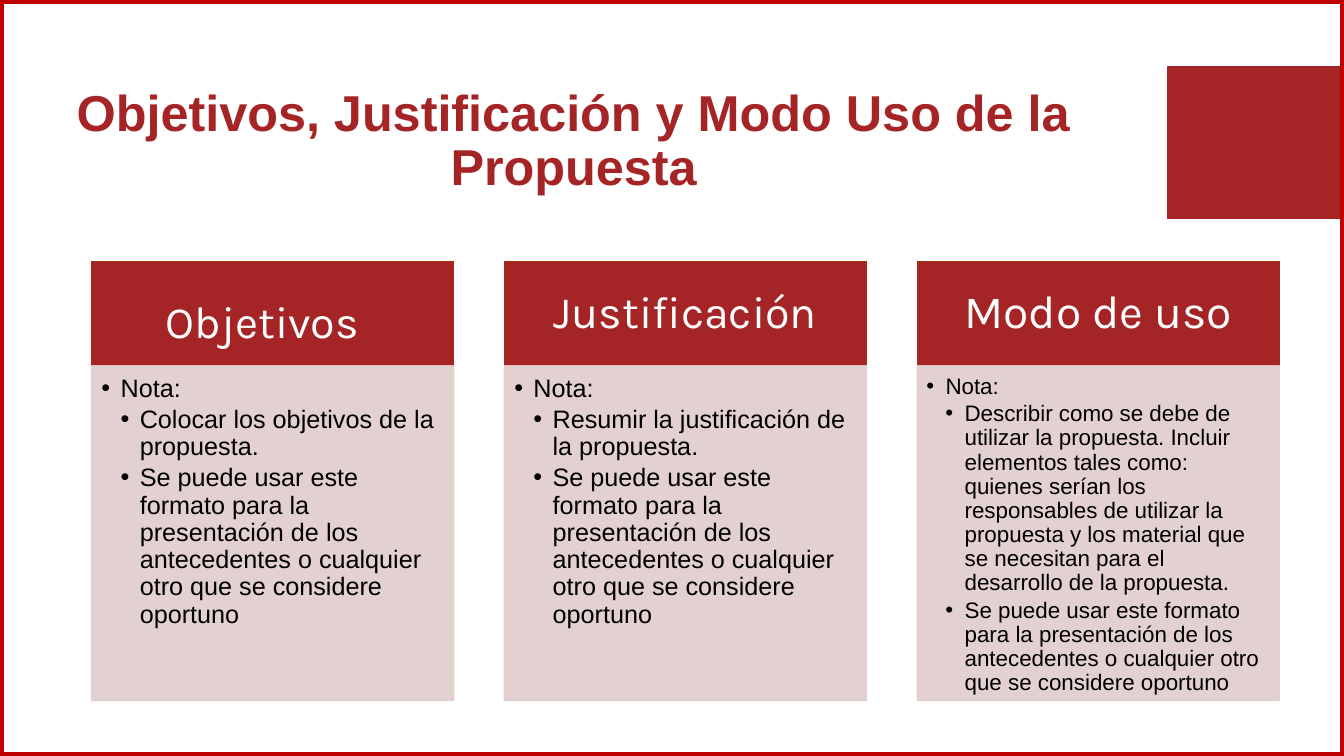
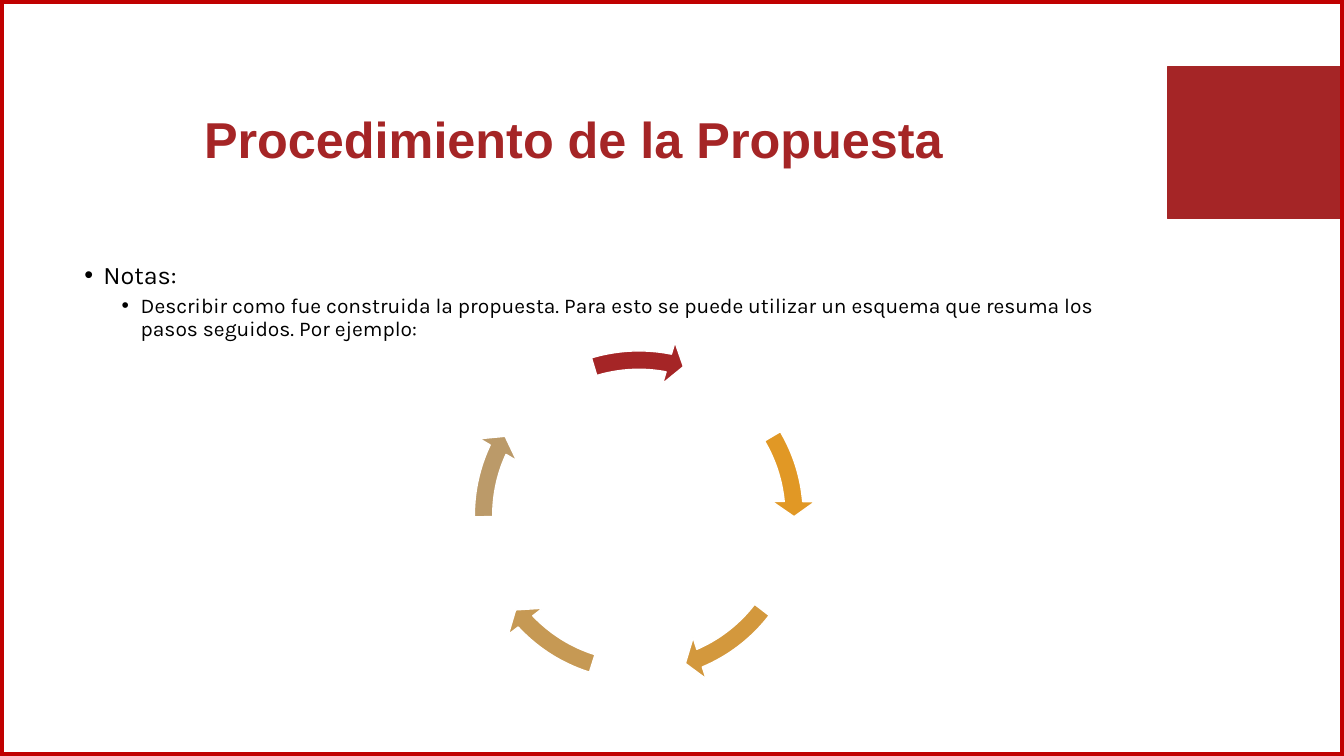
from dataclasses import dataclass

from lxml import etree
from pptx import Presentation
from pptx import util as u
from pptx.dml.color import RGBColor
from pptx.enum import shapes, text
from pptx.oxml import ns


@dataclass(frozen=True)
class Theme:
    red: str = "A52526"
    border: str = "C00000"
    header_line: str = "A5300F"
    panel: str = "E1CDCC"
    black: str = "000000"
    white: str = "FFFFFF"
    sans: str = "Arial"
    display: str = "Karla"
    title_size: float = 36
    body_size: float = 18
    detail_size: float = 15
    line_spacing: float = 0.9


THEME = Theme()

# The grid has 160 columns and 90 rows of square cells
COLUMNS, ROWS = 160, 90
CELL = u.Inches(13.333) / COLUMNS
INDENT = 0.19
DEFAULT_INSETS = (0.1, 0.05, 0.1, 0.05)

# Three cards: heading row above a panel
CARD_LEFT, CARD_STEP, CARD_WIDTH = 10.9, 49.15, 43.1
HEADER_TOP, HEADER_HEIGHT, PANEL_HEIGHT = 31.1, 12.45, 39.85
SHARED_NOTE = ("Se puede usar este formato para la presentación de los "
               "antecedentes o cualquier otro que se considere oportuno")
# Heading, heading size, heading insets, note size, panel insets, first note
CARDS = [
    ("Objetivos", 32, (0.25, 0.34, 0.45, 0.14), 18, (0.1, 0.1, 0.14, 0.16),
     "Colocar los objetivos de la propuesta."),
    ("Justificación", 32, (0.25, 0.14, 0.25, 0.14), 18, (0.1, 0.1, 0.14, 0.16),
     "Resumir la justificación de la propuesta."),
    ("Modo de uso", 33, (0.26, 0.15, 0.26, 0.15), 16, (0.09, 0.09, 0.12, 0.14),
     "Describir como se debe de utilizar la propuesta. Incluir elementos tales "
     "como: quienes serían los responsables de utilizar la propuesta y los "
     "material que se necesitan para el desarrollo de la propuesta."),
]

# Cycle arrows: colour, start and end angle in degrees
CYCLE_AREA = (55, 40.3, 42.1, 42.1)
CYCLE_ARROWS = [
    ("E19825", 329.4, 354.92),
    ("D3983D", 37.52, 66.95),
    ("C69954", 107.46, 136.89),
    ("BB9A69", 179.49, 205),
    (THEME.red, 253.28, 281.13),
]
ARROW_THICKNESS, ARROW_HEAD, ARROW_HEAD_ANGLE = 0.052, 0.061, 5.59
ADJUSTMENT_PER_DEGREE = 0.6


def cells(*counts):
    return [u.Emu(round(count * CELL)) for count in counts]


def add_shape(slide, area, fill=None, line=None, width=1,
              kind=shapes.MSO_SHAPE.RECTANGLE):
    shape = slide.shapes.add_shape(kind, *cells(*area))
    shape.shadow.inherit = False
    if fill:
        shape.fill.solid()
        shape.fill.fore_color.rgb = RGBColor.from_string(fill)
    else:
        shape.fill.background()
    shape.line.color.rgb = RGBColor.from_string(line)
    shape.line.width = u.Pt(width)
    return shape


def set_opacity(shape, percent):
    for color in shape._element.spPr.iter(ns.qn("a:srgbClr")):
        etree.SubElement(color, ns.qn("a:alpha"), val=str(percent * 1000))


def prepare_frame(shape, insets=DEFAULT_INSETS, anchor=text.MSO_ANCHOR.TOP):
    frame = shape.text_frame
    frame.word_wrap = True
    frame.vertical_anchor = anchor
    (frame.margin_left, frame.margin_top,
     frame.margin_right, frame.margin_bottom) = map(u.Inches, insets)
    return frame


def style(paragraph, size, font, color, bold=False,
          align=text.PP_ALIGN.LEFT):
    paragraph.alignment = align
    paragraph.line_spacing = THEME.line_spacing
    paragraph.font.size = u.Pt(size)
    paragraph.font.name = font
    paragraph.font.bold = bold
    paragraph.font.color.rgb = RGBColor.from_string(color)


def set_bullet(paragraph, indent):
    properties = paragraph._p.get_or_add_pPr()
    properties.set("marL", str(u.Inches(indent)))
    properties.set("indent", str(-u.Inches(INDENT)))
    etree.SubElement(properties, ns.qn("a:buFont"), typeface=THEME.sans)
    etree.SubElement(properties, ns.qn("a:buChar"), char="•")


def add_bullets(frame, items, font, gap):
    """Items are (wording, level, indent, size); gap is space between them."""
    for index, (wording, level, indent, size) in enumerate(items):
        paragraph = frame.add_paragraph() if index else frame.paragraphs[0]
        paragraph.text = wording
        paragraph.level = level
        set_bullet(paragraph, indent)
        style(paragraph, size, font, THEME.black)
        paragraph.space_before = u.Pt(gap if index else 0)
        paragraph.space_after = u.Pt(0)


def add_centred_text(shape, wording, size, font, color, bold=False,
                     insets=DEFAULT_INSETS):
    frame = prepare_frame(shape, insets, text.MSO_ANCHOR.MIDDLE)
    frame.text = wording
    style(frame.paragraphs[0], size, font, color, bold, text.PP_ALIGN.CENTER)


def add_base_slide(presentation, title):
    """Blank slide with the corner block, title and border."""
    slide = presentation.slides.add_slide(presentation.slide_layouts[6])
    add_shape(slide, (139, 8, 21, 18), THEME.red, THEME.red)
    title_box = slide.shapes.add_textbox(*cells(5.25, 9.85, 126.1, 14.15))
    add_centred_text(title_box, title, THEME.title_size, THEME.sans,
                     THEME.red, bold=True)
    add_shape(slide, (0, 0, COLUMNS, ROWS), line=THEME.border, width=6)
    return slide


def add_card(slide, column, heading, heading_size, heading_insets,
             note_size, panel_insets, first_note):
    left = CARD_LEFT + column * CARD_STEP
    header = add_shape(slide, (left, HEADER_TOP, CARD_WIDTH, HEADER_HEIGHT),
                       THEME.red, THEME.header_line)
    add_centred_text(header, heading, heading_size, THEME.display,
                     THEME.white, insets=heading_insets)
    panel = add_shape(slide, (left, HEADER_TOP + HEADER_HEIGHT,
                              CARD_WIDTH, PANEL_HEIGHT),
                      THEME.panel, THEME.panel)
    set_opacity(panel, 90)
    notes = [("Nota:", 1, INDENT, note_size)]
    notes += [(note, 2, 2 * INDENT, note_size)
              for note in (first_note, SHARED_NOTE)]
    add_bullets(prepare_frame(panel, panel_insets), notes, THEME.sans,
                gap=0.15 * note_size)


def add_cycle_arrow(slide, color, start, end):
    arrow = add_shape(slide, CYCLE_AREA, color, THEME.white,
                      kind=shapes.MSO_SHAPE.CIRCULAR_ARROW)
    angles = [angle * ADJUSTMENT_PER_DEGREE
              for angle in (ARROW_HEAD_ANGLE, end, start)]
    for index, value in enumerate([ARROW_THICKNESS, *angles, ARROW_HEAD]):
        arrow.adjustments[index] = value


def main():
    presentation = Presentation()
    presentation.slide_width, presentation.slide_height = cells(COLUMNS, ROWS)

    # Goals, justification and use
    slide = add_base_slide(
        presentation, "Objetivos, Justificación y Modo Uso de la Propuesta")
    for column, card in enumerate(CARDS):
        add_card(slide, column, *card)

    # Procedure
    slide = add_base_slide(presentation, "Procedimiento de la Propuesta")
    body = slide.shapes.add_textbox(*cells(8.85, 30.7, 126.1, 47.3))
    add_bullets(prepare_frame(body), [
        ("Notas:", 0, INDENT, THEME.body_size),
        ("Describir como fue construida la propuesta. Para esto se puede "
         "utilizar un esquema que resuma los pasos seguidos. Por ejemplo:",
         1, 0.56, THEME.detail_size),
    ], THEME.display, gap=3.8)
    for arrow in CYCLE_ARROWS:
        add_cycle_arrow(slide, *arrow)

    presentation.save("out.pptx")


if __name__ == "__main__":
    main()
